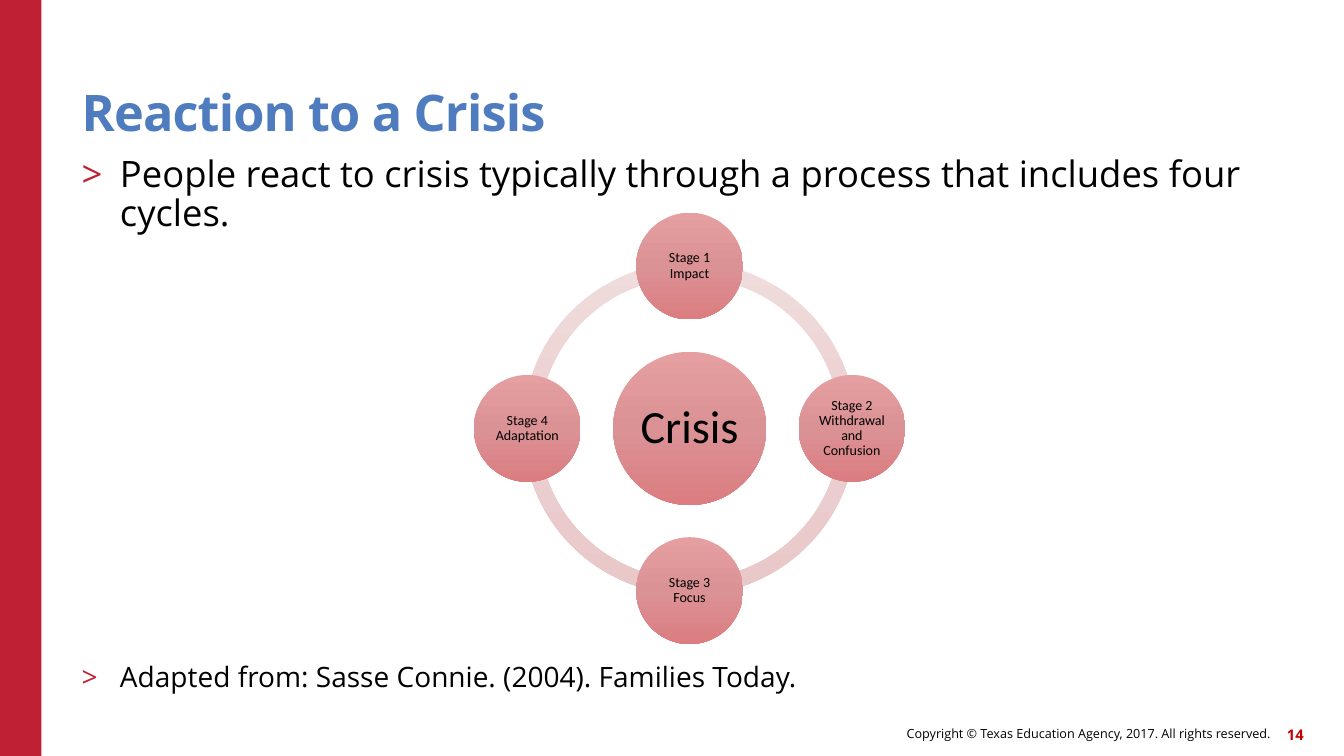
"""Build the slide on the four-stage reaction to a crisis."""
from copy import deepcopy
from math import cos, radians, sin

from lxml import etree
from pptx import Presentation
from pptx.dml.color import RGBColor
from pptx.enum.shapes import MSO_SHAPE
from pptx.enum.text import MSO_ANCHOR, MSO_AUTO_SIZE, PP_ALIGN
from pptx.oxml.ns import qn
from pptx.util import Inches, Pt

TITLE = "Reaction to a Crisis"
BULLETS = [
    ("People react to crisis typically through a process that includes four cycles.", 26, 1.55, 1),
    ("Adapted from: Sasse Connie. (2004). Families Today.", 20, 6.58, 0.4),
]
CENTRE_LABEL = "Crisis"
STAGES = ["Stage 1 Impact", "Stage 2 Withdrawal and Confusion", "Stage 3 Focus", "Stage 4 Adaptation"]
COPYRIGHT = "Copyright © Texas Education Agency, 2017. All rights reserved."
SLIDE_NUMBER = "14"

WIDTH, HEIGHT = 13.33, 7.5
LEFT = 0.81
CENTRE_X, CENTRE_Y = 6.84, 4.25
RING_SIZE, HUB_SIZE, STAGE_SIZE, ORBIT = 3.3, 1.52, 1.06, 1.61
RING_THICKNESS = 0.046
ADJUSTMENT_PER_DEGREE = 0.6

BLACK = RGBColor(0x00, 0x00, 0x00)
RED = RGBColor(0xC0, 0x20, 0x33)
DARK_RED = RGBColor(0xC0, 0x00, 0x00)
BLUE = RGBColor(0x4E, 0x7C, 0xBE)
RING_COLOURS = [RGBColor(0xF0, 0xDC, 0xDC), RGBColor(0xEB, 0xCF, 0xD0), RGBColor(0xE9, 0xC8, 0xC9)]
CIRCLE_COLOURS = [RGBColor(0xE6, 0x9F, 0xA1), RGBColor(0xDB, 0x92, 0x95), RGBColor(0xDB, 0x7D, 0x81)]

RECTANGLE, OVAL, BLOCK_ARC = MSO_SHAPE.RECTANGLE, MSO_SHAPE.OVAL, MSO_SHAPE.BLOCK_ARC
TOP, MIDDLE, BOTTOM = MSO_ANCHOR.TOP, MSO_ANCHOR.MIDDLE, MSO_ANCHOR.BOTTOM
ALIGN_LEFT, ALIGN_CENTRE, ALIGN_RIGHT = PP_ALIGN.LEFT, PP_ALIGN.CENTER, PP_ALIGN.RIGHT
NO_AUTOFIT = MSO_AUTO_SIZE.NONE


def write(shape, text, size, colour=BLACK, name="Open Sans", bold=False,
          anchor=MIDDLE, alignment=ALIGN_LEFT, spacing=0.9, inset=0.0, bullet=None):
    """Put one formatted paragraph into a shape and return it."""
    frame = shape.text_frame
    margin = Inches(inset)
    frame_format = {
        "word_wrap": True, "auto_size": NO_AUTOFIT, "vertical_anchor": anchor,
        "margin_left": margin, "margin_right": margin,
        "margin_top": margin, "margin_bottom": margin,
    }
    for key, value in frame_format.items():
        setattr(frame, key, value)
    frame.text = text
    paragraph = frame.paragraphs[0]
    paragraph.alignment, paragraph.line_spacing = alignment, spacing
    if bullet:
        properties = paragraph._p.get_or_add_pPr()
        indent = Inches(0.38)
        properties.set("marL", str(indent))
        properties.set("indent", str(-indent))
        colour_element = etree.SubElement(properties, qn("a:buClr"))
        etree.SubElement(colour_element, qn("a:srgbClr"), val=str(RED))
        etree.SubElement(properties, qn("a:buFont"), typeface=name)
        etree.SubElement(properties, qn("a:buChar"), char=bullet)
    font = paragraph.runs[0].font
    for key, value in {"size": Pt(size), "name": name, "bold": bold}.items():
        setattr(font, key, value)
    font.color.rgb = colour
    return paragraph


def add_text(slide, box, text, size, **text_format):
    """Add a text box placed by left, top, width and height."""
    shape = slide.shapes.add_textbox(*map(Inches, box))
    write(shape, text, size, **text_format)


def add_round(group, kind, x, y, size, colours):
    """Add a borderless shape centred on a point, with a vertical gradient."""
    shape = group.shapes.add_shape(
        kind, Inches(x - size / 2), Inches(y - size / 2), Inches(size), Inches(size))
    shape.shadow.inherit = False
    shape.line.fill.background()
    shape.fill.gradient()
    shape.fill.gradient_angle = 270
    stop_list = shape._element.spPr.find(".//" + qn("a:gsLst"))
    stop_list.insert(1, deepcopy(stop_list[0]))
    for index, (stop, colour) in enumerate(zip(shape.fill.gradient_stops, colours)):
        stop.position = index / 2
        stop.color.rgb = colour
    return shape


def add_cycle(slide):
    """Draw the ring, the hub and the stages around it."""
    group = slide.shapes.add_group_shape()
    for start in (180, 90, 0, 270):
        arc = add_round(group, BLOCK_ARC, CENTRE_X, CENTRE_Y, RING_SIZE, RING_COLOURS)
        arc.adjustments[0] = start * ADJUSTMENT_PER_DEGREE
        arc.adjustments[1] = (start + 90) % 360 * ADJUSTMENT_PER_DEGREE
        arc.adjustments[2] = RING_THICKNESS
    circles = [(CENTRE_LABEL, CENTRE_X, CENTRE_Y, HUB_SIZE, 33)]
    for index, stage in enumerate(STAGES):
        angle = radians(index * 360 / len(STAGES) - 90)
        circles.append((stage, CENTRE_X + ORBIT * cos(angle),
                        CENTRE_Y + ORBIT * sin(angle), STAGE_SIZE, 10))
    for label, x, y, size, font_size in circles:
        circle = add_round(group, OVAL, x, y, size, CIRCLE_COLOURS)
        write(circle, label, font_size, name="Calibri", alignment=ALIGN_CENTRE, inset=0.01)


def main():
    """Create and save the presentation."""
    presentation = Presentation()
    presentation.slide_width, presentation.slide_height = Inches(WIDTH), Inches(HEIGHT)
    slide = presentation.slides.add_slide(presentation.slide_layouts[5])

    band = slide.shapes.add_shape(RECTANGLE, 0, 0, Inches(0.41), Inches(HEIGHT))
    band.shadow.inherit = False
    band.fill.solid()
    band.fill.fore_color.rgb = RED
    band.line.fill.background()

    add_text(slide, (6.14, 7.12, 6.46, 0.32), COPYRIGHT, 9, alignment=ALIGN_RIGHT, spacing=1.0)
    add_text(slide, (12.51, 7.13, 0.42, 0.32), SLIDE_NUMBER, 10.5, colour=DARK_RED,
             bold=True, alignment=ALIGN_RIGHT, spacing=1.0)

    title = slide.shapes.title
    place = {"left": LEFT, "top": 0.45, "width": 11, "height": 0.96}
    for key, value in place.items():
        setattr(title, key, Inches(value))
    paragraph = write(title, TITLE, 36, colour=BLUE, bold=True, anchor=BOTTOM)
    paragraph.runs[0].font._element.set("spc", "-60")

    for text, size, top, height in BULLETS:
        add_text(slide, (LEFT, top, 11.75, height), text, size, anchor=TOP, bullet=">")
    add_cycle(slide)
    presentation.save("out.pptx")


if __name__ == "__main__":
    main()
